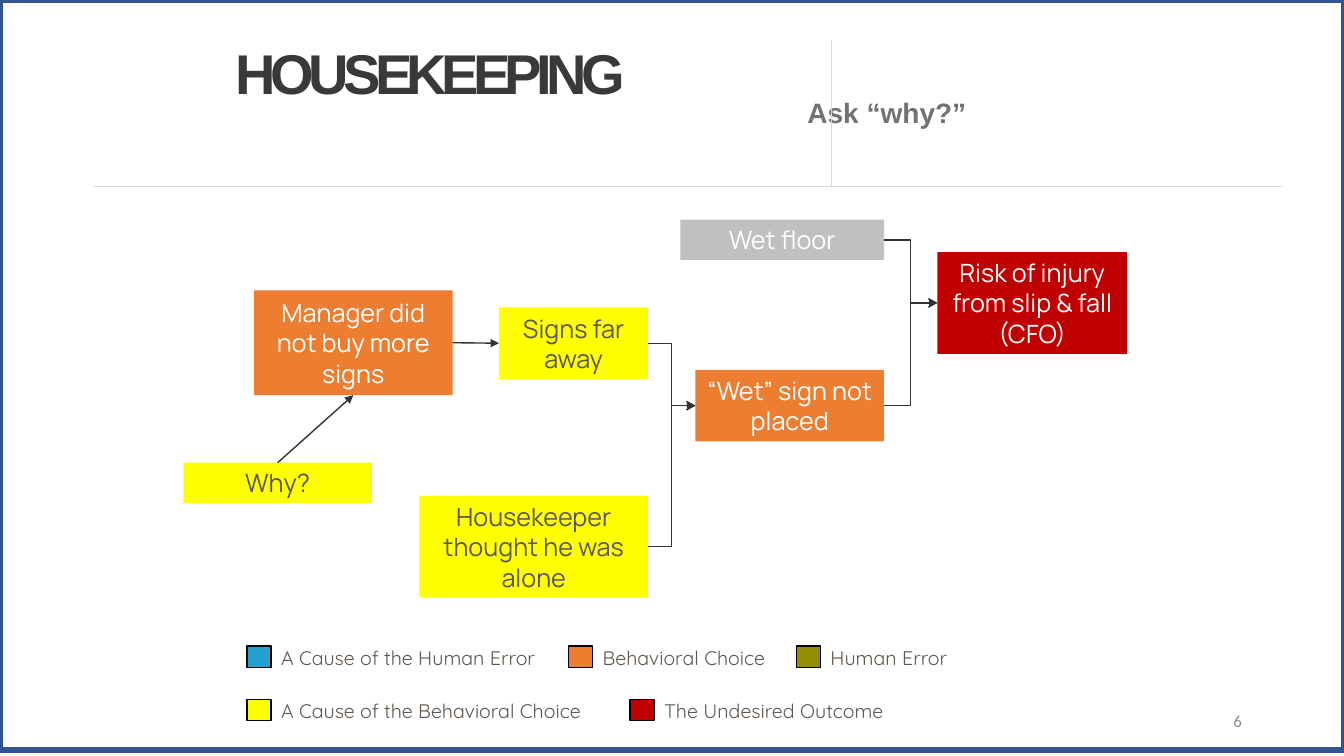
from lxml import etree
from pptx import Presentation
from pptx import util as u
from pptx.dml.color import RGBColor
from pptx.enum import shapes, text
from pptx.oxml.ns import qn

CELL = u.Inches(0.1)  # one column or row of the slide grid
COLS, ROWS = 133.33, 75
TOP, LEFT, BASE, RIGHT = range(4)  # connection sites of a rectangle
RED, GOLD, ORANGE, GREY = "C00000", "FFFF00", "ED7D31", "C0C0C0"
WHITE, DARK, INK = "FFFFFF", "595959", "333333"


def grid(*cells):
    return [round(n * CELL) for n in cells]


def paint(target, color):
    """Give a fill or a font a solid colour."""
    if hasattr(target, "solid"):
        target.solid()
        target.fore_color.rgb = RGBColor.from_string(color)
    else:
        target.color.rgb = RGBColor.from_string(color)


def write(shape, words, font, size, color, align=text.PP_ALIGN.LEFT, bold=False):
    frame = shape.text_frame
    frame.word_wrap = True
    frame.auto_size = text.MSO_AUTO_SIZE.NONE
    frame.vertical_anchor = text.MSO_ANCHOR.MIDDLE
    frame.text = words
    para = frame.paragraphs[0]
    para.alignment = align
    para.font.name, para.font.size, para.font.bold = font, u.Pt(size), bold
    paint(para.font, color)
    return para


def label(slide, box, *style):
    return write(slide.shapes.add_textbox(*grid(*box)), *style)


def block(slide, box, fill=None, line=None, width=1):
    shape = slide.shapes.add_shape(shapes.MSO_SHAPE.RECTANGLE, *grid(*box))
    shape.shadow.inherit = False
    if fill:
        paint(shape.fill, fill)
    else:
        shape.fill.background()
    if line:
        paint(shape.line.fill, line)
        shape.line.width = u.Pt(width)
    else:
        shape.line.fill.background()
    return shape


def link(slide, kind, ends, color, width, head=None):
    line = slide.shapes.add_connector(kind, *grid(*ends))
    paint(line.line.fill, color)
    line.line.width = u.Pt(width)
    if head:
        etree.SubElement(line.line._get_or_add_ln(), qn("a:tailEnd"), type=head)
    etree.SubElement(line._element.spPr, qn("a:effectLst"))
    return line


def header(slide, box):
    x, y, w, h = box
    # Rules
    straight = shapes.MSO_CONNECTOR.STRAIGHT
    split, base = x + 73.3, y + h
    link(slide, straight, (split, y, split, base), "D9D9D9", 0.5)
    link(slide, straight, (x, base, x + w, base), "D9D9D9", 0.5)
    # Title and prompt
    title, body = slide.placeholders
    title.left, title.top, title.width, title.height = grid(x + 13.2, y - 3.4, 56.7, 13.9)
    body.left, body.top, body.width, body.height = grid(x + 69.9, y + 0.4, 22.4, 13.9)
    head = write(title, "HOUSEKEEPING", "Arial", 40, "3B3838", bold=True)
    head.line_spacing = 0.9
    head.runs[0].font._element.set("spc", "-400")
    ask = write(body, "Ask “why?”", "Arial", 20, "767171", bold=True)
    ask.line_spacing, ask.space_before = 0.9, u.Pt(10)
    props = ask._p.get_or_add_pPr()
    props.set("marL", "0")
    props.set("indent", "0")
    etree.SubElement(props, qn("a:buNone"))


def causes(slide, box):
    x, y = box[:2]
    # Name: words, place in the region, fill, font colour
    nodes = {
        "risk": ("Risk of injury from slip & fall (CFO)", (74.8, 3.2, 18.8, 10.1), RED, WHITE),
        "floor": ("Wet floor", (49.3, 0, 20.2, 4), GREY, WHITE),
        "why": ("Why?", (0, 24.1, 18.7, 4), GOLD, DARK),
        "far": ("Signs far away", (31.3, 8.7, 14.8, 7.1), GOLD, DARK),
        "sign": ("“Wet” sign not placed", (50.8, 14.9, 18.7, 7.1), ORANGE, WHITE),
        "boss": ("Manager did not buy more signs", (7, 7, 19.7, 10.4), ORANGE, WHITE),
        "alone": ("Housekeeper thought he was alone", (23.4, 27.4, 22.7, 10.1), GOLD, DARK),
    }
    made = {}
    for name, (words, (dx, dy, w, h), fill, color) in nodes.items():
        made[name] = block(slide, (x + dx, y + dy, w, h), fill)
        write(made[name], words, "Manrope", 18, color, text.PP_ALIGN.CENTER)
    # Arrows from cause to effect
    line, bent = shapes.MSO_CONNECTOR.STRAIGHT, shapes.MSO_CONNECTOR.ELBOW
    for kind, start, out, end, into, head in (
        (line, "why", TOP, "boss", BASE, "triangle"),
        (line, "boss", RIGHT, "far", LEFT, "triangle"),
        (bent, "far", RIGHT, "sign", LEFT, "triangle"),
        (bent, "floor", RIGHT, "risk", LEFT, "triangle"),
        (bent, "alone", RIGHT, "sign", LEFT, "arrow"),
        (bent, "sign", RIGHT, "risk", LEFT, "arrow"),
    ):
        arrow = link(slide, kind, (0, 0, 1, 1), INK, 1, head)
        arrow.begin_connect(made[start], out)
        arrow.end_connect(made[end], into)


def legend(slide, box):
    x, y, w, h = box
    step = h - 3.4
    for words, dx, row, wide, fill in (
        ("A Cause of the Human Error", 0, 0, 31.6, "24A1CE"),
        ("Behavioral Choice", 31.9, 0, 20.3, ORANGE),
        ("Human Error", 54.5, 0, 14.7, "929000"),
        ("A Cause of the Behavioral Choice", 0, 1, 35.1, GOLD),
        ("The Undesired Outcome", 38, 1, 26.1, RED),
    ):
        top = y + row * step
        block(slide, (x + dx, top + 0.6, 2.4, 2.1), fill, "000000")
        label(slide, (x + dx + 2.4, top, wide, 3.4), words, "Quicksand", 14, "5F564F")


def main():
    deck = Presentation()
    deck.slide_width, deck.slide_height = grid(COLS, ROWS)
    slide = deck.slides.add_slide(deck.slide_layouts[1])
    header(slide, (9.2, 4, 118, 14.5))
    causes(slide, (18.2, 21.8, 93.6, 37.5))
    legend(slide, (24.5, 63.5, 71.6, 8.7))
    # Page number and frame
    label(slide, (94.2, 69.5, 30, 4), "6", "Calibri", 12, "8C8C8C", text.PP_ALIGN.RIGHT)
    block(slide, (0, 0, COLS, ROWS - 0.6), line="325491", width=4.5)
    deck.save("out.pptx")


if __name__ == "__main__":
    main()
